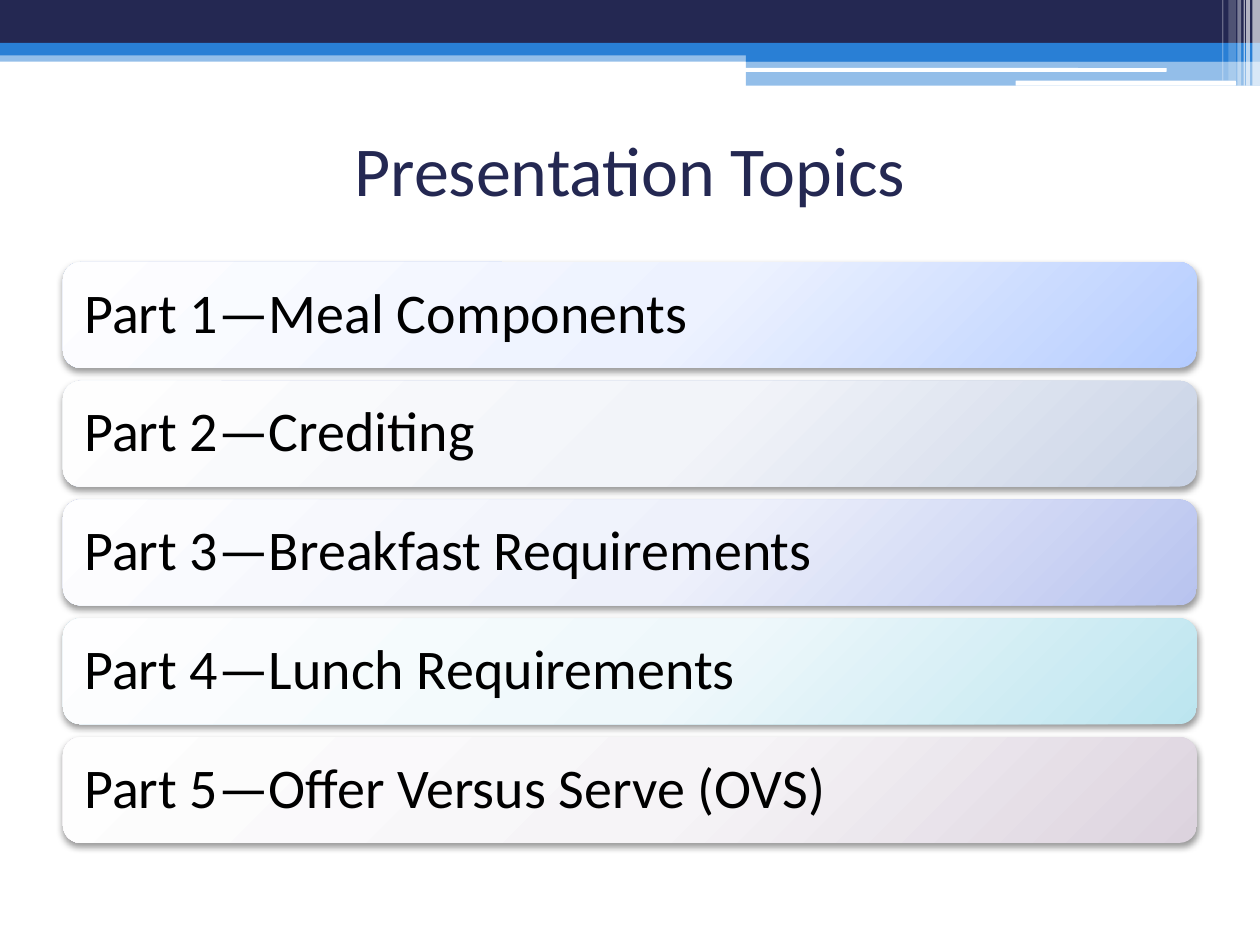
from lxml.etree import SubElement as Sub
from pptx import Presentation
from pptx.dml.color import RGBColor
from pptx.enum.shapes import MSO_SHAPE as Kind
from pptx.enum.text import MSO_ANCHOR as Anchor, PP_ALIGN as Align
from pptx.oxml import parse_xml
from pptx.oxml.ns import nsdecls, qn
from pptx.util import Inches, Pt

COLS, ROWS = 10, 7.5
NAVY, BLUE, WHITE, BLACK = "242852", "297FD5", "FFFFFF", "000000"

# left, top, width, height, colour, opacity in percent
BANDS = [
    (0, 0.4, 10, 0.09, BLUE, 50),
    (0, 0, 10, 0.34, NAVY, 100),
    (0, 0.34, 10, 0.1, BLUE, 100),
    (5.92, 0.39, 4.08, 0.1, BLUE, 100),
    (5.92, 0.48, 4.08, 0.2, BLUE, 50),
]
RULES = [(5.91, 0.54, 3.35, 0.03), (8.06, 0.64, 1.75, 0.04)]
# left, width, height, opacity in percent
STRIPES = [
    (9.94, 0.06, 0.68, 65),
    (9.89, 0.03, 0.68, 65),
    (9.87, 0.01, 0.68, 60),
    (9.82, 0.03, 0.68, 40),
    (9.75, 0.06, 0.64, 20),
    (9.7, 0.01, 0.64, 30),
]
# text, then gradient colours from the upper left outwards
TOPICS = [
    ("Part 1—Meal Components", "FEFEFF", "EDF2FF", "B4CCFF"),
    ("Part 2—Crediting", "FEFEFE", "F2F4F9", "C9D3E6"),
    ("Part 3—Breakfast Requirements", "FEFEFF", "EEF1FB", "B8C3EF"),
    ("Part 4—Lunch Requirements", "FEFEFF", "EFF8FB", "BCE5EF"),
    ("Part 5—Offer Versus Serve (OVS)", "FEFEFE", "F6F4F7", "DCD3DE"),
]
STOPS = (0, 55, 100)
LEFT, TOP, WIDE, HIGH, STEP = 0.5, 2.08, 9, 0.84, 0.9425
PAD = 0.04


def rgb(code):
    return RGBColor.from_string(code)


def tint(node, code, alpha):
    """Add a colour with an opacity in percent to an XML node."""
    clr = Sub(node, qn("a:srgbClr"), val=code)
    Sub(clr, qn("a:alpha"), val=str(alpha * 1000))


class Deck:
    """Holds the style and the current slide; lengths are grid columns and rows."""

    font = "Calibri"

    def __init__(self):
        self.prs = Presentation()
        self.prs.slide_width = Inches(COLS)
        self.prs.slide_height = Inches(ROWS)
        self.slide = self.prs.slides.add_slide(self.prs.slide_layouts[6])

    def place(self, x, y, w, h):
        col, row = self.prs.slide_width / COLS, self.prs.slide_height / ROWS
        return [round(v) for v in (x * col, y * row, w * col, h * row)]

    def shape(self, box, kind=Kind.RECTANGLE):
        item = self.slide.shapes.add_shape(kind, *self.place(*box))
        item.shadow.inherit = False
        item.line.fill.background()
        return item

    def block(self, box, code, alpha=100, kind=Kind.RECTANGLE):
        item = self.shape(box, kind)
        item.fill.solid()
        item.fill.fore_color.rgb = rgb(code)
        if alpha < 100:
            solid = item._element.spPr.find(qn("a:solidFill"))
            solid.clear()
            tint(solid, code, alpha)

    def card(self, box, codes):
        """Rounded card with a radial gradient and a soft shadow below."""
        item = self.shape(box, Kind.ROUNDED_RECTANGLE)
        props = item._element.spPr
        stops = "".join(
            f'<a:gs pos="{pos * 1000}"><a:srgbClr val="{code}"/></a:gs>'
            for pos, code in zip(STOPS, codes))
        props.find(qn("a:prstGeom")).addnext(parse_xml(
            f'<a:gradFill {nsdecls("a")} rotWithShape="1"><a:gsLst>{stops}</a:gsLst>'
            '<a:path path="circle"><a:fillToRect l="-40000" t="-90000"'
            ' r="140000" b="190000"/></a:path></a:gradFill>'))
        shade = Sub(props.find(qn("a:effectLst")), qn("a:outerShdw"),
                    blurRad=str(Pt(4.1)), dist=str(Pt(2)), dir="5400000",
                    rotWithShape="0")
        tint(shade, BLACK, 40)

    def text(self, box, words, size, code, frame=None, para=None):
        body = self.slide.shapes.add_textbox(*self.place(*box)).text_frame
        line = body.paragraphs[0]
        run = line.add_run()
        run.text = words
        run.font.color.rgb = rgb(code)
        styles = [
            (body, {"word_wrap": True, "vertical_anchor": Anchor.MIDDLE,
                    **(frame or {})}),
            (line, para or {}),
            (run.font, {"name": self.font, "size": Pt(size)}),
        ]
        for part, style in styles:
            for name, value in style.items():
                setattr(part, name, value)


def main():
    deck = Deck()
    for *box, code, alpha in BANDS:
        deck.block(box, code, alpha)
    for box in RULES:
        deck.block(box, WHITE, kind=Kind.ROUNDED_RECTANGLE)
    for x, w, h, alpha in STRIPES:
        deck.block((x, 0, w, h), WHITE, alpha)

    deck.text((LEFT, 0.75, WIDE, 1.17), "Presentation Topics", 40, NAVY,
              para={"alignment": Align.CENTER})

    inset = {f"margin_{side}": Inches(0.13)
             for side in ("left", "top", "right", "bottom")}
    for i, (words, *codes) in enumerate(TOPICS):
        y = TOP + i * STEP
        deck.card((LEFT, y, WIDE, HIGH), codes)
        deck.text((LEFT + PAD, y + PAD, WIDE - 2 * PAD, HIGH - 2 * PAD), words,
                  32, BLACK, inset, {"line_spacing": 0.9})
    deck.prs.save("out.pptx")


if __name__ == "__main__":
    main()
